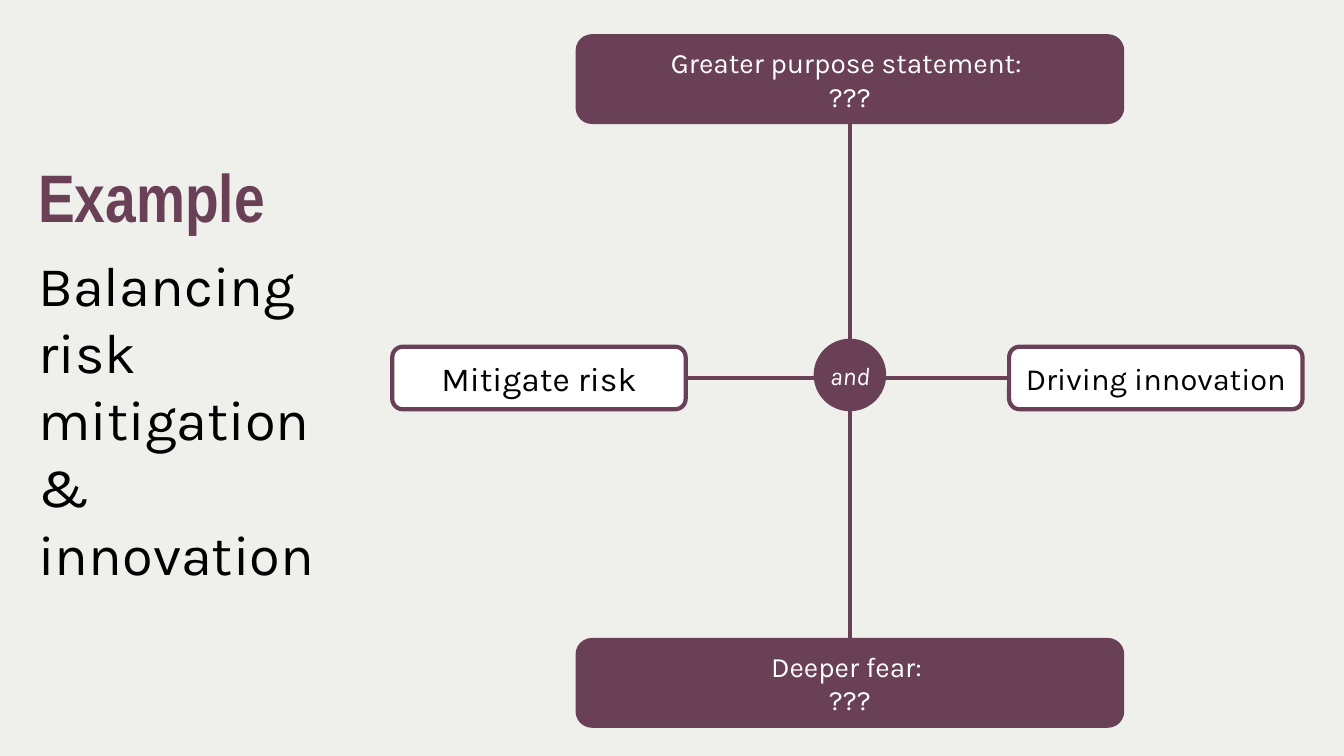
import pptx
import pptx.util
import pptx.dml.color
import pptx.enum.shapes
import pptx.enum.text
import pptx.oxml.ns
import lxml.etree

hues = {"plum": "694056", "white": "FFFFFF", "black": "000000", "back": "EFEFEC"}
kinds = pptx.enum.shapes.MSO_SHAPE
aligns = pptx.enum.text.PP_ALIGN
middle = pptx.enum.text.MSO_ANCHOR.MIDDLE

deck = pptx.Presentation()
deck.slide_width = pptx.util.Inches(13.33)
deck.slide_height = pptx.util.Inches(7.5)
col = deck.slide_width / 100
row = deck.slide_height / 100
slide = deck.slides.add_slide(deck.slide_layouts[5])


def paint(part, hue):
    part.rgb = pptx.dml.color.RGBColor.from_string(hues[hue])


def style(para, size, hue, face="Karla", bold=False, slant=False):
    for run in para.runs:
        run.font.size = pptx.util.Pt(size)
        run.font.name = face
        run.font.bold = bold
        run.font.italic = slant
        paint(run.font.color, hue)


fill = slide.background.fill
fill.solid()
paint(fill.fore_color, "back")

hub = 63.24
axes = [(29.56, 50, 96.92, 50), (hub, 4.8, hub, 91.87)]
for left, top, right, base in axes:
    axis = slide.shapes.add_connector(
        pptx.enum.shapes.MSO_CONNECTOR.STRAIGHT,
        int(left * col), int(top * row), int(right * col), int(base * row))
    axis.line.width = pptx.util.Pt(3)
    paint(axis.line.color, "plum")
    lxml.etree.SubElement(axis.line._get_or_add_ln().getparent(),
                          pptx.oxml.ns.qn("a:effectLst"))

side = (21.83, 8.27)
pole = (40.51, 11.33)
nodes = [
    (kinds.ROUNDED_RECTANGLE, 40.1, 50, side, "white", "black", 24, "Mitigate risk"),
    (kinds.ROUNDED_RECTANGLE, 86, 50, side, "white", "black", 22, "Driving innovation"),
    (kinds.ROUNDED_RECTANGLE, hub, 10.47, pole, "plum", "white", 20,
     "Greater purpose statement: \n???"),
    (kinds.ROUNDED_RECTANGLE, hub, 90.33, pole, "plum", "white", 20, "Deeper fear: \n???"),
    (kinds.OVAL, hub, 49.6, (5.4, 9.6), "plum", "white", 18, "and"),
]
for kind, x, y, (wide, high), tint, ink, size, words in nodes:
    node = slide.shapes.add_shape(
        kind, int((x - wide / 2) * col), int((y - high / 2) * row),
        int(wide * col), int(high * row))
    node.shadow.inherit = False
    node.fill.solid()
    paint(node.fill.fore_color, tint)
    frame = node.text_frame
    frame.word_wrap = True
    frame.vertical_anchor = middle
    frame.text = words
    for para in frame.paragraphs:
        para.alignment = aligns.CENTER
        style(para, size, ink, slant=kind == kinds.OVAL)
    if kind == kinds.OVAL:
        node.line.fill.background()
        frame.margin_left = frame.margin_right = 0
        frame.margin_top = frame.margin_bottom = 0
    else:
        node.line.width = pptx.util.Pt(3)
        paint(node.line.color, "plum")

title = slide.shapes.title
title.left, title.top = int(2.1 * col), int(20.27 * row)
title.width, title.height = int(24.38 * col), int(57.6 * row)
frame = title.text_frame
frame.text = "Example\nBalancing risk mitigation & innovation"
frame.word_wrap = True
frame.auto_size = pptx.enum.text.MSO_AUTO_SIZE.NONE
frame.vertical_anchor = middle
for para in frame.paragraphs:
    para.alignment = aligns.LEFT
    para.space_before = pptx.util.Pt(10)
head, theme = frame.paragraphs
style(head, 48, "plum", "Arial Narrow", True)
style(theme, 40, "black")

deck.save("out.pptx")
